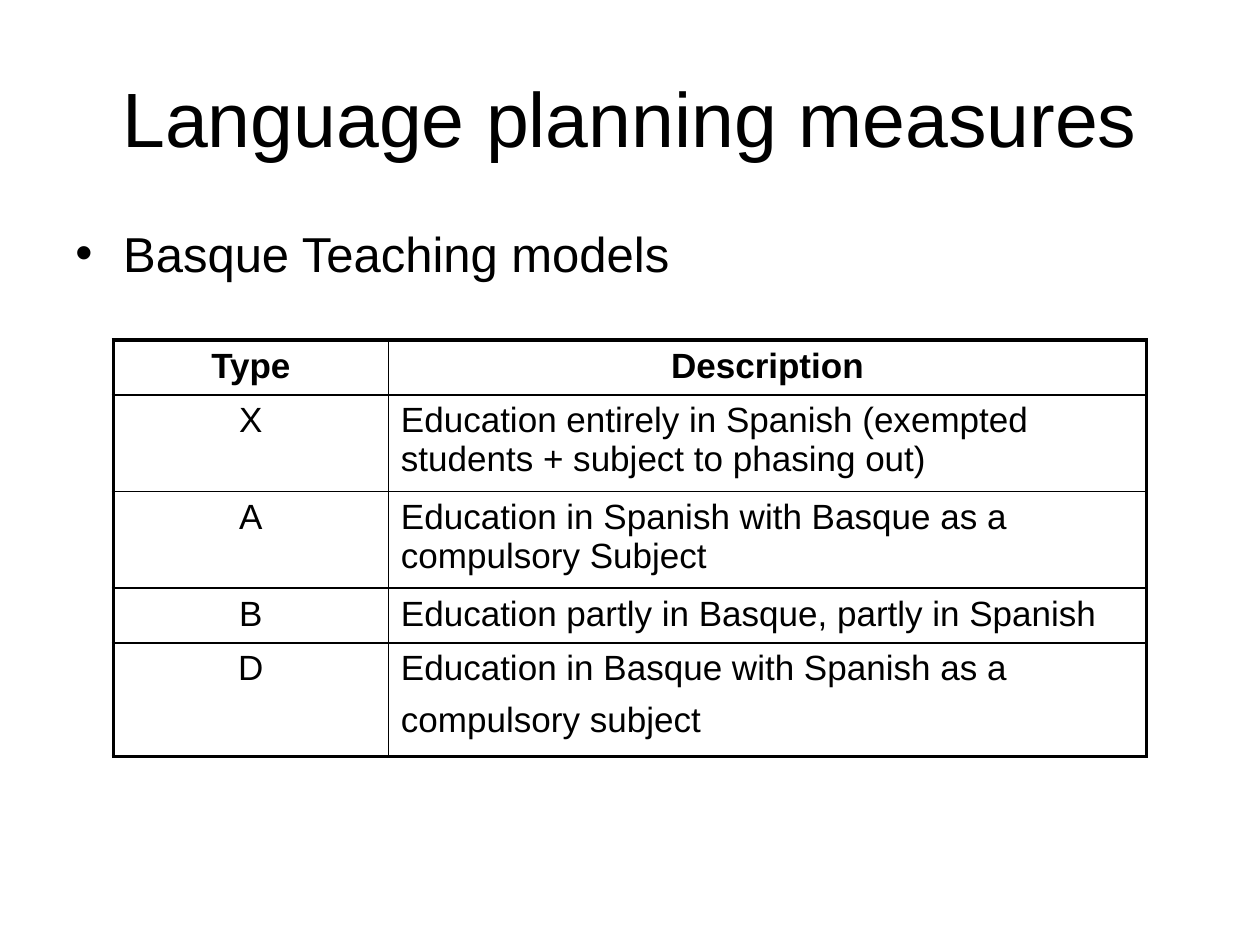
from lxml import etree
from pptx import Presentation, util as u
from pptx.dml.color import RGBColor
from pptx.enum import text as t
from pptx.oxml import ns

BLACK = RGBColor(0, 0, 0)
WHITE = RGBColor(255, 255, 255)
WIDE, HIGH = u.Inches(10), u.Inches(7.5)
THICK, THIN = u.Pt(2.25), u.Pt(1)
COLS = (2.18, 6.01)
ROWS = (0.41, 0.72, 0.72, 0.41, 0.83)
MODELS = (
    ("Type", "Description"),
    ("X", "Education entirely in Spanish (exempted students + subject to phasing out)"),
    ("A", "Education in Spanish with Basque as a compulsory Subject"),
    ("B", "Education partly in Basque, partly in Spanish"),
    ("D", "Education in Basque with Spanish as a compulsory subject"),
)


def write(para, words, size=20, bold=False, align=t.PP_ALIGN.LEFT):
    """Add a formatted run to a paragraph."""
    para.alignment = align
    run = para.add_run()
    run.text = words
    font = run.font
    font.name, font.size, font.bold = "Arial", u.Pt(size), bold
    font.color.rgb = BLACK


def share(left, top, width, height):
    """Turn shares of the slide into a box of lengths."""
    return int(left * WIDE), int(top * HIGH), int(width * WIDE), int(height * HIGH)


def place(shape, box):
    """Move a shape to a box."""
    shape.left, shape.top, shape.width, shape.height = box


def head(slide, box, words):
    """Fill the title placeholder."""
    title = slide.shapes.title
    place(title, box)
    frame = title.text_frame
    frame.word_wrap = True
    frame.vertical_anchor = t.MSO_ANCHOR.MIDDLE
    write(frame.paragraphs[0], words, size=44, align=t.PP_ALIGN.CENTER)


def point(slide, box, words):
    """Add a text box with one bullet point."""
    frame = slide.shapes.add_textbox(*box).text_frame
    frame.word_wrap = True
    para = frame.paragraphs[0]
    write(para, words, size=28)
    para.space_before = u.Pt(3)
    props = para._p.get_or_add_pPr()
    props.set("marL", str(u.Inches(0.38)))
    props.set("indent", str(-u.Inches(0.38)))
    etree.SubElement(props, ns.qn("a:buFont"), typeface="Arial")
    etree.SubElement(props, ns.qn("a:buChar"), char="•")


def edge(cell, side, width):
    """Draw one border of a cell."""
    line = etree.Element(ns.qn(f"a:ln{side}"), w=str(width))
    fill = etree.SubElement(line, ns.qn("a:solidFill"))
    etree.SubElement(fill, ns.qn("a:srgbClr"), val=str(BLACK))
    return line


def frame_cell(cell, row, col):
    """Border a cell, thick where it meets the table's outline."""
    outer = {"L": col == 0, "R": col == len(COLS) - 1,
             "T": row == 0, "B": row == len(ROWS) - 1}
    props = cell._tc.get_or_add_tcPr()
    for spot, (side, out) in enumerate(outer.items()):
        props.insert(spot, edge(cell, side, THICK if out else THIN))


def grid(slide, box):
    """Add the table of teaching models."""
    table = slide.shapes.add_table(len(ROWS), len(COLS), *box).table
    table.first_row = table.horz_banding = False
    for col, share_w in zip(table.columns, COLS):
        col.width = int(box[2] * share_w / sum(COLS))
    for row, share_h in zip(table.rows, ROWS):
        row.height = int(box[3] * share_h / sum(ROWS))
    for r, model in enumerate(MODELS):
        for c, words in enumerate(model):
            cell = table.cell(r, c)
            cell.fill.solid()
            cell.fill.fore_color.rgb = WHITE
            mid = r == 0 or c == 0
            write(cell.text_frame.paragraphs[0], words, bold=r == 0,
                  align=t.PP_ALIGN.CENTER if mid else t.PP_ALIGN.LEFT)
            frame_cell(cell, r, c)
    write(table.cell(len(ROWS) - 1, 1).text_frame.paragraphs[0], " ", size=28)


def main():
    """Build and save the slide."""
    deck = Presentation()
    deck.slide_width, deck.slide_height = WIDE, HIGH
    slide = deck.slides.add_slide(deck.slide_layouts.get_by_name("Title Only"))
    slide.background.fill.solid()
    slide.background.fill.fore_color.rgb = WHITE
    head(slide, share(0.05, 0.04, 0.9, 1 / 6), "Language planning measures")
    point(slide, share(0.05, 0.23, 0.87, 0.66), "Basque Teaching models")
    grid(slide, share(0.09, 0.36, 0.82, 0.41))
    deck.save("out.pptx")


if __name__ == "__main__":
    main()
